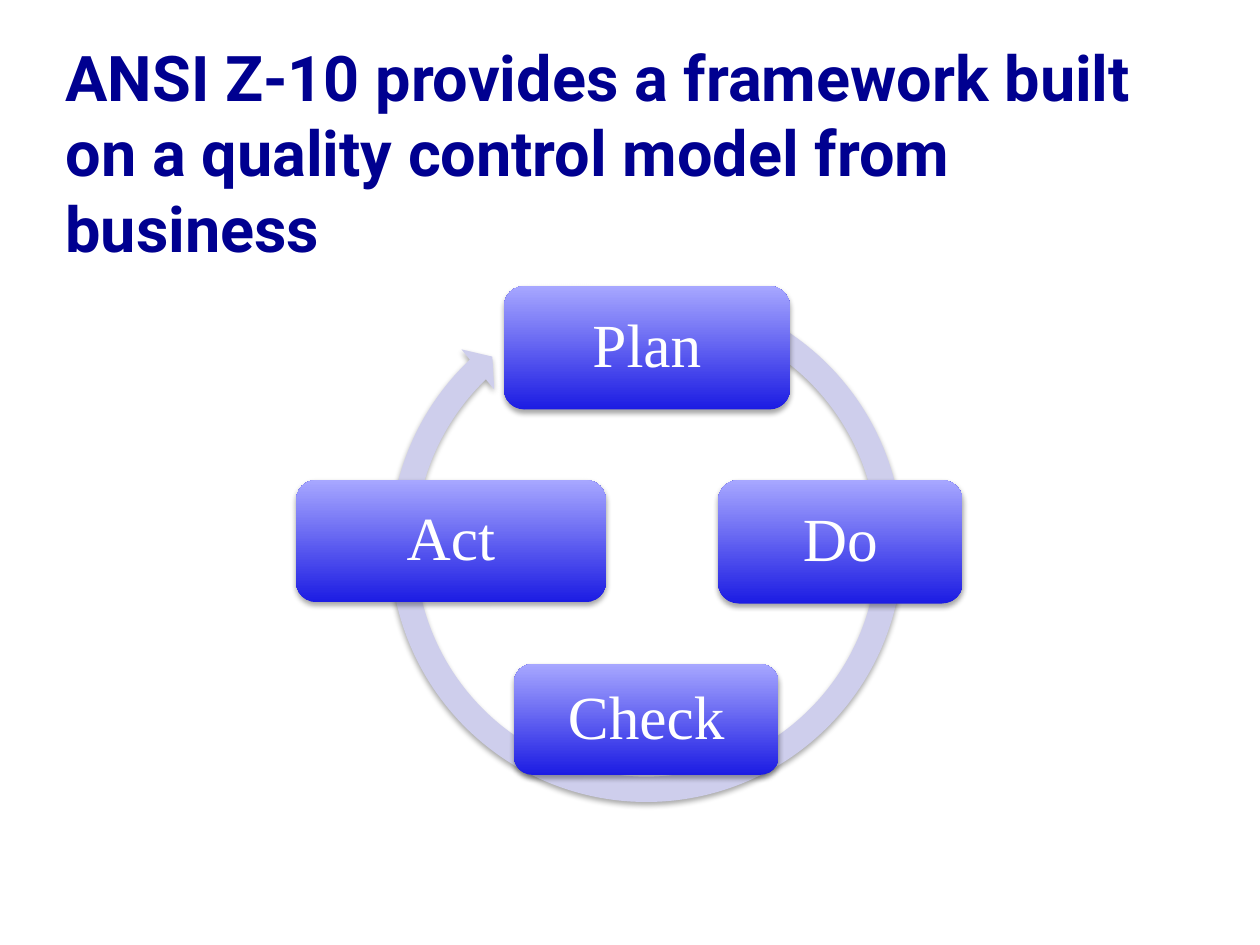
"""Build a slide that shows the Plan-Do-Check-Act cycle."""
from lxml.etree import SubElement
from pptx import Presentation
from pptx.dml.color import RGBColor
from pptx.enum.shapes import MSO_SHAPE
from pptx.enum.text import MSO_ANCHOR, MSO_AUTO_SIZE, PP_ALIGN
from pptx.oxml.ns import qn
from pptx.util import Inches, Pt

TITLE = "ANSI Z-10 provides a framework built on a quality control model from business"
STEPS = [
    ("Plan", 4, 2.27, 2.27, 0.98),
    ("Do", 5.7, 3.81, 1.94, 0.98),
    ("Check", 4.08, 5.27, 2.1, 0.88),
    ("Act", 2.35, 3.81, 2.46, 0.97),
]
RING = (2.99, 2.19, 4.28, 4.28)
BEND = (0.047, 2.729, 135.76, 175.449, 0.048)
NAVY, PALE, WHITE = "000090", "CECEEC", "FFFFFF"
BLUES = ("1C1CE3", "A7A7FF")


def paint(color, code):
    color.rgb = RGBColor.from_string(code)


def write(para, text, font, size, code, bold=False):
    run = para.add_run()
    run.text = text
    run.font.name, run.font.size, run.font.bold = font, Pt(size), bold
    paint(run.font.color, code)


def add_shape(slide, kind, box):
    shape = slide.shapes.add_shape(kind, *map(Inches, box))
    shape.line.fill.background()
    shape.shadow.inherit = False
    effects = shape._element.spPr.find(qn("a:effectLst"))
    shade = SubElement(effects, qn("a:outerShdw"), blurRad=str(Pt(3.1)),
                       dist=str(Pt(1.8)), dir="5400000", rotWithShape="0")
    color = SubElement(shade, qn("a:srgbClr"), val="000000")
    SubElement(color, qn("a:alpha"), val="35000")
    return shape


def add_title(slide):
    title = slide.shapes.title
    title.left, title.top, title.width, title.height = map(
        Inches, (0.42, 0.58, 9.17, 1.25))
    frame = title.text_frame
    frame.word_wrap = True
    frame.auto_size = MSO_AUTO_SIZE.NONE
    frame.vertical_anchor = MSO_ANCHOR.MIDDLE
    para = frame.paragraphs[0]
    para.alignment = PP_ALIGN.LEFT
    write(para, TITLE, "Roboto", 36, NAVY, True)


def add_ring(slide):
    ring = add_shape(slide, MSO_SHAPE.CIRCULAR_ARROW, RING)
    for i, value in enumerate(BEND):
        ring.adjustments[i] = value
    ring.fill.solid()
    paint(ring.fill.fore_color, PALE)


def add_step(slide, name, *box):
    step = add_shape(slide, MSO_SHAPE.ROUNDED_RECTANGLE, box)
    step.fill.gradient()
    step.fill.gradient_angle = 90
    for stop, code in zip(step.fill.gradient_stops, BLUES):
        paint(stop.color, code)
    frame = step.text_frame
    frame.word_wrap = True
    frame.vertical_anchor = MSO_ANCHOR.MIDDLE
    frame.margin_left = frame.margin_right = Inches(0.15)
    frame.margin_top = frame.margin_bottom = Inches(0.15)
    para = frame.paragraphs[0]
    para.alignment = PP_ALIGN.CENTER
    para.line_spacing = 0.9
    write(para, name, "Times New Roman", 35, WHITE)


def main():
    deck = Presentation()
    deck.slide_width, deck.slide_height = Inches(10), Inches(7.5)
    slide = deck.slides.add_slide(deck.slide_layouts[5])
    add_title(slide)
    add_ring(slide)
    for step in STEPS:
        add_step(slide, *step)
    deck.save("out.pptx")


if __name__ == "__main__":
    main()
